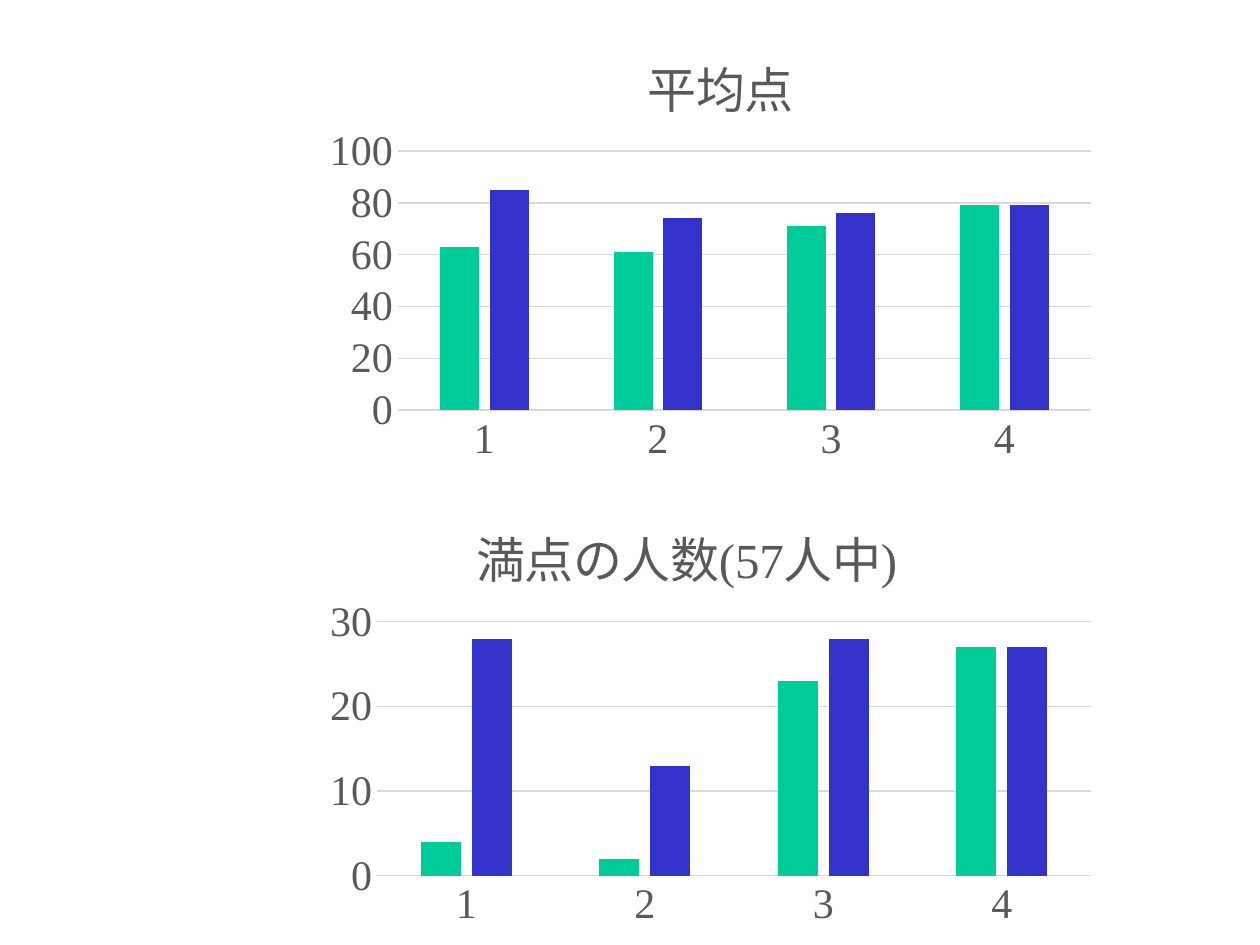
"""Build a slide with two clustered column charts of test results."""
from dataclasses import dataclass

from pptx import Presentation
from pptx.chart.data import CategoryChartData
from pptx.dml.color import RGBColor
from pptx.enum.chart import XL_CHART_TYPE, XL_TICK_MARK
from pptx.oxml import parse_xml
from pptx.oxml.ns import qn
from pptx.util import Inches, Pt

COLUMNS = XL_CHART_TYPE.COLUMN_CLUSTERED
NO_TICK = XL_TICK_MARK.NONE
CHART_NS = "http://schemas.openxmlformats.org/drawingml/2006/chart"
FONT = "Times New Roman"
COLORS = {"text": "595959", "rule": "D9D9D9", "first": "00CC99", "second": "3333CC"}
SLIDE_WIDTH, SLIDE_HEIGHT = Inches(10), Inches(7.5)
CHART_LEFT, CHART_WIDTH = 0.249, 0.629
CATEGORIES = ("1", "2", "3", "4")


@dataclass(frozen=True)
class ScoreChart:
    title: tuple[str, ...]
    top: float
    height: float
    first: tuple[int, ...]
    second: tuple[int, ...]
    axis_max: int
    axis_step: int
    title_place: tuple[float, float]
    plot_place: tuple[float, float, float, float]


SCORE_CHARTS = (
    ScoreChart(("平均点",), 0, 0.5, (63, 61, 71, 79), (85, 74, 76, 79),
               100, 20, (0.41, 0.08), (0.106, 0.32, 0.875, 0.548)),
    ScoreChart(("満点の人数", "(57", "人中", ")"), 0.517, 0.475, (4, 2, 23, 27), (28, 13, 28, 27),
               30, 10, (0.2, 0.06), (0.08, 0.297, 0.901, 0.566)),
)


def rgb(name: str) -> RGBColor:
    return RGBColor.from_string(COLORS[name])


def style_font(font, size: float) -> None:
    font.name, font.size, font.bold = FONT, Pt(size), False
    font.color.rgb = rgb("text")


def style_rule(line) -> None:
    line.color.rgb = rgb("rule")
    line.width = Pt(0.75)


def place(element, position: int, shares: tuple[float, ...], inner: bool = False) -> None:
    """Give a chart part a manual layout in shares of the chart's size."""
    for old in element.findall(qn("c:layout")):
        element.remove(old)
    target = '<c:layoutTarget val="inner"/>' if inner else ""
    modes = '<c:xMode val="edge"/><c:yMode val="edge"/>'
    values = "".join(f'<c:{key} val="{share}"/>' for key, share in zip("xywh", shares))
    element.insert(position, parse_xml(
        f'<c:layout xmlns:c="{CHART_NS}"><c:manualLayout>{target}{modes}{values}'
        "</c:manualLayout></c:layout>"))


def style_axes(chart, score: ScoreChart) -> None:
    for axis in (chart.category_axis, chart.value_axis):
        axis.major_tick_mark = axis.minor_tick_mark = NO_TICK
        style_font(axis.tick_labels.font, 24)
    style_rule(chart.category_axis.format.line)
    values = chart.value_axis
    values.format.line.fill.background()
    values.minimum_scale, values.maximum_scale = 0, score.axis_max
    values.major_unit = score.axis_step
    values.has_major_gridlines = True
    style_rule(values.major_gridlines.format.line)


def add_score_chart(slide, score: ScoreChart) -> None:
    data = CategoryChartData()
    data.categories = CATEGORIES
    data.add_series("Series 1", score.first)
    data.add_series("Series 2", score.second)
    chart = slide.shapes.add_chart(
        COLUMNS, int(SLIDE_WIDTH * CHART_LEFT), int(SLIDE_HEIGHT * score.top),
        int(SLIDE_WIDTH * CHART_WIDTH), int(SLIDE_HEIGHT * score.height), data).chart
    chart.has_legend = False
    style_font(chart.font, 24)
    style_axes(chart, score)

    chart.has_title = True
    heading = chart.chart_title.text_frame.paragraphs[0]
    for part in score.title:
        run = heading.add_run()
        run.text = part
        style_font(run.font, 28)
    chart.chart_title.include_in_layout = False
    place(chart.chart_title.element if hasattr(chart.chart_title, "element")
          else chart.element.find(f".//{qn('c:title')}"), 1, score.title_place)
    place(chart.element.find(f".//{qn('c:plotArea')}"), 0, score.plot_place, inner=True)

    plot = chart.plots[0]
    plot.gap_width, plot.overlap, plot.vary_by_categories = 219, -27, False
    for series, color in zip(plot.series, ("first", "second")):
        series.format.fill.solid()
        series.format.fill.fore_color.rgb = rgb(color)


def main() -> None:
    deck = Presentation()
    deck.slide_width, deck.slide_height = SLIDE_WIDTH, SLIDE_HEIGHT
    slide = deck.slides.add_slide(deck.slide_layouts[6])
    for score in SCORE_CHARTS:
        add_score_chart(slide, score)
    deck.save("out.pptx")


if __name__ == "__main__":
    main()
